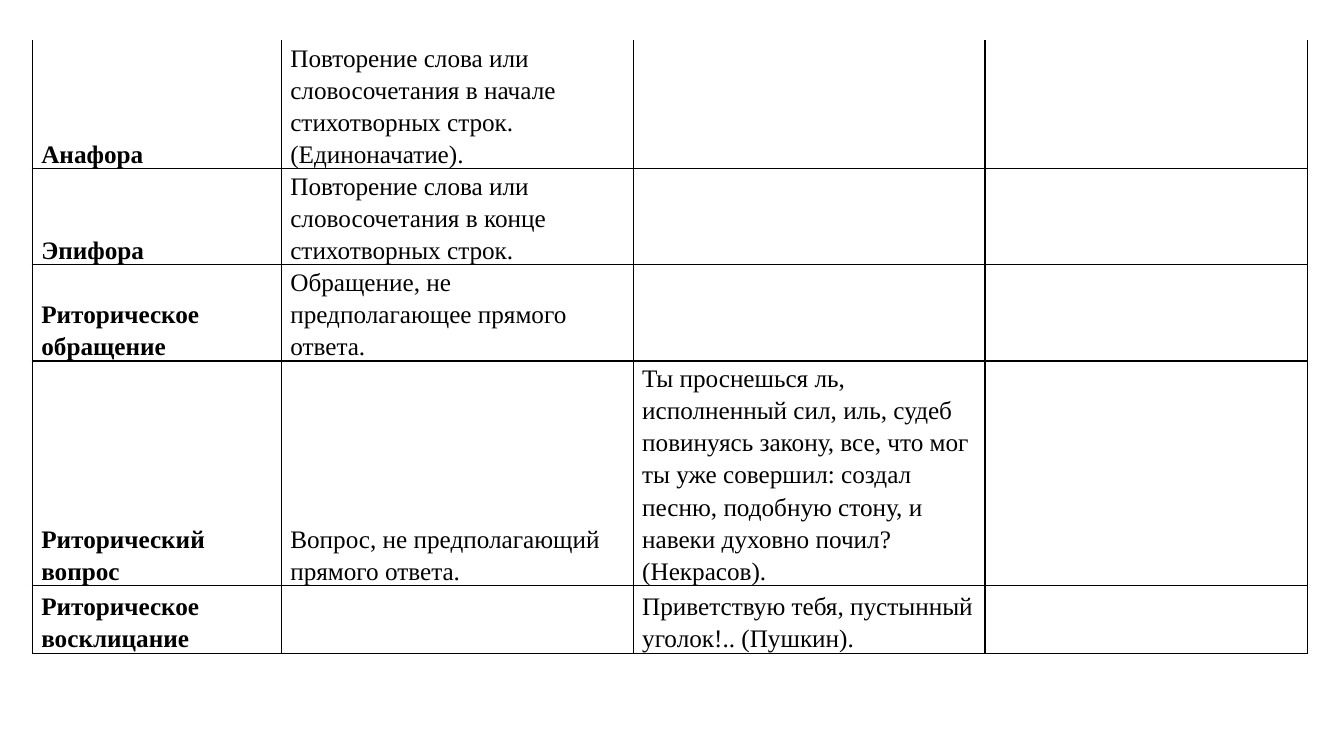
from dataclasses import dataclass

from lxml import etree
from pptx import Presentation
from pptx.dml.color import RGBColor
from pptx.enum import text
from pptx.oxml import ns
from pptx.util import Inches, Pt


@dataclass(frozen=True)
class Theme:
    font: str = "Times New Roman"
    size: float = 18
    ink: str = "000000"
    paper: str = "FFFFFF"
    border: float = 1
    line_spacing: float = 1.15


@dataclass(frozen=True)
class Device:
    term: str
    meaning: str
    example: str
    height: float


THEME = Theme()
COLUMN_WIDTHS = (2.47, 3.49, 3.49, 3.2)
DEVICES = (
    Device("Анафора", "Повторение слова или словосочетания в начале "
           "стихотворных строк. (Единоначатие).", "", 1.01),
    Device("Эпифора", "Повторение слова или словосочетания в конце "
           "стихотворных строк.", "", 0.67),
    Device("Риторическое обращение",
           "Обращение, не предполагающее прямого ответа.", "", 0.67),
    Device("Риторический вопрос", "Вопрос, не предполагающий прямого ответа.",
           "Ты проснешься ль, исполненный сил, иль, судеб повинуясь закону, "
           "все, что мог ты уже совершил: создал песню, подобную стону, и "
           "навеки духовно почил? (Некрасов).", 1.7),
    Device("Риторическое восклицание", "",
           "Приветствую тебя, пустынный уголок!.. (Пушкин).", 0.67),
)


def set_borders(cell, has_top: bool) -> None:
    """Outline a cell, leaving its top edge open if asked."""
    tc_pr = cell._tc.get_or_add_tcPr()
    for i, side in enumerate("LRTB"):
        ln = etree.Element(ns.qn(f"a:ln{side}"), w=str(Pt(THEME.border)))
        if side == "T" and not has_top:
            etree.SubElement(ln, ns.qn("a:noFill"))
        else:
            fill = etree.SubElement(ln, ns.qn("a:solidFill"))
            etree.SubElement(fill, ns.qn("a:srgbClr"), val=THEME.ink)
        tc_pr.insert(i, ln)


def fill_cell(cell, words: str, bold: bool, has_top: bool) -> None:
    cell.fill.solid()
    cell.fill.fore_color.rgb = RGBColor.from_string(THEME.paper)
    set_borders(cell, has_top)
    cell.vertical_anchor = text.MSO_ANCHOR.BOTTOM
    cell.margin_left = cell.margin_right = Inches(0.07)
    cell.margin_top = cell.margin_bottom = 0
    p = cell.text_frame.paragraphs[0]
    p.text = words
    p.line_spacing = THEME.line_spacing
    p._p.get_or_add_pPr().set("marL", str(Inches(0.02)))
    for r in p.runs:
        r.font.name = THEME.font
        r.font.size = Pt(THEME.size)
        r.font.bold = bold
        r.font.color.rgb = RGBColor.from_string(THEME.ink)


def add_device_table(slide) -> None:
    frame = slide.shapes.add_table(
        len(DEVICES), len(COLUMN_WIDTHS),
        Inches(0.32), Inches(0.4), Inches(12.65), Inches(6.45))
    table = frame.table
    table.first_row = table.horz_banding = False
    for column, width in zip(table.columns, COLUMN_WIDTHS):
        column.width = Inches(width)
    for i, device in enumerate(DEVICES):
        table.rows[i].height = Inches(device.height)
        # The last column is left empty for the reader's own examples
        row_words = (device.term, device.meaning, device.example, "")
        for j, words in enumerate(row_words):
            fill_cell(table.cell(i, j), words, bold=j == 0, has_top=i > 0)
    # Rows grow with their text, so the frame keeps its full height
    frame.height = Inches(6.45)


def main() -> None:
    prs = Presentation()
    prs.slide_width, prs.slide_height = Inches(13.33), Inches(7.5)
    slide = prs.slides.add_slide(prs.slide_layouts[6])
    add_device_table(slide)
    prs.save("out.pptx")


if __name__ == "__main__":
    main()
